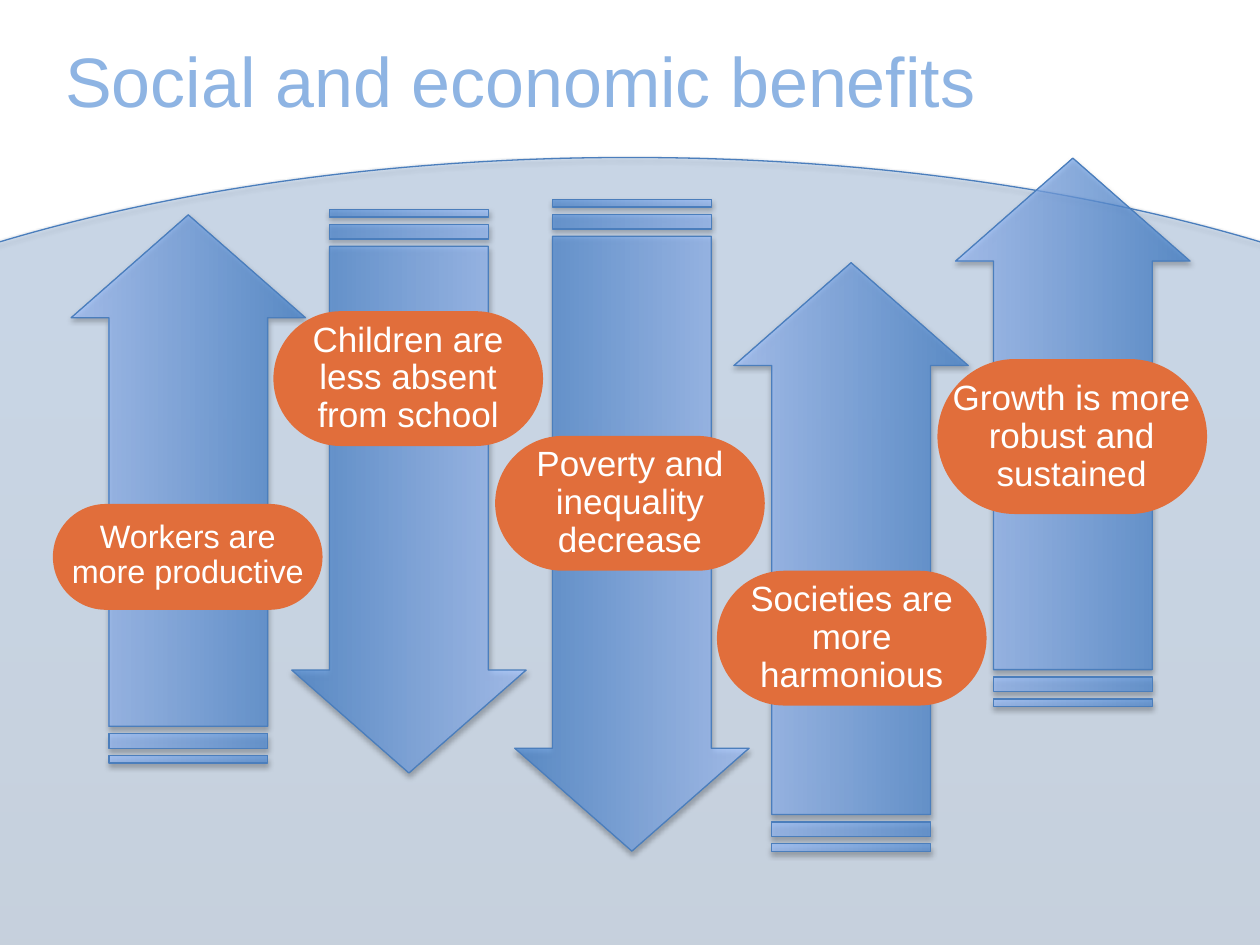
from lxml import etree
from pptx import Presentation
from pptx.dml.color import RGBColor
from pptx.enum.shapes import MSO_SHAPE
from pptx.enum.text import MSO_ANCHOR, PP_ALIGN
from pptx.oxml import parse_xml
from pptx.oxml.ns import nsdecls, qn
from pptx.util import Inches, Pt

OVAL = MSO_SHAPE.OVAL
ARROW = MSO_SHAPE.STRIPED_RIGHT_ARROW
PILL = MSO_SHAPE.ROUNDED_RECTANGLE
MIDDLE = MSO_ANCHOR.MIDDLE
CENTER = PP_ALIGN.CENTER
LEFT = PP_ALIGN.LEFT
UP, DOWN = 270, 90

COLORS = {
    "title": "8EB4E3",
    "label": "FFFFFF",
    "pill": "E16E3B",
    "line": "4B7EBC",
    "shadow": "000000",
}
HILL = [(0, "2F5F99", 20), (80, "3D7CC7", 20), (100, "3A7CCB", 20)]
BLUES = [(0, "3F80CE", 69), (100, "A4C4FF", 69)]


def color(name):
    return RGBColor.from_string(COLORS[name])


def shadow(blur, dist, angle, alpha):
    """Outer shadow element; blur and dist in points, alpha in percent."""
    return parse_xml(
        f'<a:effectLst {nsdecls("a")}><a:outerShdw blurRad="{Pt(blur)}" '
        f'dist="{Pt(dist)}" dir="{angle * 60000}" rotWithShape="0">'
        f'<a:srgbClr val="{COLORS["shadow"]}"><a:alpha val="{alpha * 1000}"/>'
        '</a:srgbClr></a:outerShdw></a:effectLst>')


class Deck:
    def __init__(self):
        self.prs = Presentation()
        self.prs.slide_width = Inches(10)
        self.prs.slide_height = Inches(7.5)
        self.slide = self.prs.slides.add_slide(self.prs.slide_layouts[6])

    def shade(self, shape, stops):
        """Gradient running upwards, thin outline and soft shadow."""
        shape.fill.gradient()
        props = shape.fill._xPr
        grad = props.find(qn("a:gradFill"))
        items = grad.find(qn("a:gsLst"))
        for old in list(items):
            items.remove(old)
        for pos, tone, alpha in stops:
            stop = etree.SubElement(items, qn("a:gs"), pos=str(pos * 1000))
            clr = etree.SubElement(stop, qn("a:srgbClr"), val=tone)
            etree.SubElement(clr, qn("a:alpha"), val=str(alpha * 1000))
        grad.find(qn("a:lin")).set("ang", str(270 * 60000))
        shape.line.color.rgb = color("line")
        shape.line.width = Pt(0.75)
        props.append(shadow(3.1, 1.8, 90, 35))

    def hill(self, *box):
        shape = self.slide.shapes.add_shape(OVAL, *map(Inches, box))
        self.shade(shape, HILL)

    def arrow(self, left, top, length, turn):
        """Striped arrow; left and top are those before it is turned."""
        box = map(Inches, (left, top, length, 1.86))
        shape = self.slide.shapes.add_shape(ARROW, *box)
        shape.adjustments[0] = 0.677
        shape.adjustments[1] = 0.439
        shape.rotation = turn
        self.shade(shape, BLUES)

    def text(self, shapes, box, words, size, tone, align):
        frame = shapes.add_textbox(*map(Inches, box)).text_frame
        frame.word_wrap = True
        frame.vertical_anchor = MIDDLE
        frame.text = words
        para = frame.paragraphs[0]
        para.alignment = align
        run = para.runs[0]
        run.font.size = Pt(size)
        run.font.color.rgb = color(tone)
        run.font.fill._xPr.append(shadow(3, 3, 45, 43))
        run.font.name = "Arial"
        return para

    def title(self, words, *box):
        self.text(self.slide.shapes, box, words, 40, "title", LEFT)

    def pill(self, words, left, top, height=1.07, inner=None, size=20):
        """Label on a pill; inner is the text box if it is not the usual one."""
        group = self.slide.shapes.add_group_shape().shapes
        box = map(Inches, (left, top, 2.14, height))
        shape = group.add_shape(PILL, *box)
        shape.adjustments[0] = 0.5
        shape.shadow.inherit = False
        shape.fill.solid()
        shape.fill.fore_color.rgb = color("pill")
        shape.line.fill.background()
        inner = inner or (left + 0.04, top, 2.06, height)
        para = self.text(group, inner, words, size, "label", CENTER)
        para.line_spacing = 0.9


def main():
    deck = Deck()
    deck.hill(-3.5, 1.25, 17, 7)
    deck.title("Social and economic benefits", 0.42, 0.17, 9.5, 0.92)
    deck.arrow(-0.68, 2.95, 4.35, UP)
    deck.pill("Workers are more productive", 0.42, 4, 0.84,
              (0.42, 4.03, 2.14, 0.76), 18.5)
    deck.arrow(1.01, 2.97, 4.47, DOWN)
    deck.arrow(2.43, 3.24, 5.17, DOWN)
    deck.pill("Children are less absent from school", 2.17, 2.47)
    deck.arrow(4.42, 3.49, 4.67, UP)
    deck.pill("Societies are more harmonious", 5.69, 4.53)
    deck.pill("Poverty and inequality decrease", 3.93, 3.46)
    deck.arrow(6.34, 2.5, 4.35, UP)
    deck.pill("Growth is more robust and sustained", 7.44, 2.85, 1.23,
              (7.42, 2.93, 2.17, 1.08))
    deck.prs.save("out.pptx")


if __name__ == "__main__":
    main()
